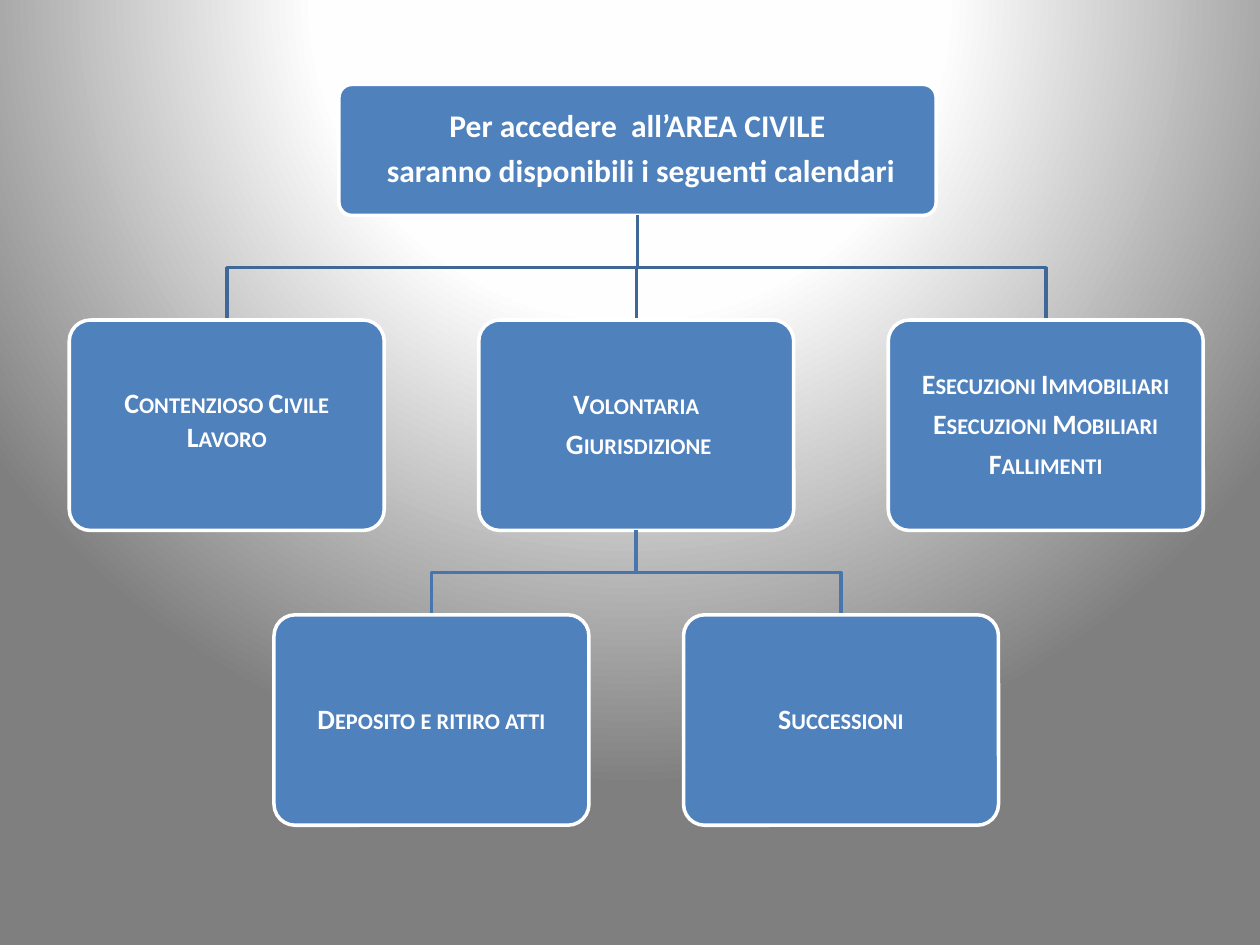
"""Build the organisation chart of the calendars available in the civil area."""
from dataclasses import dataclass

from pptx import Presentation
from pptx.dml.color import RGBColor
from pptx.enum.shapes import MSO_SHAPE
from pptx.enum.text import MSO_ANCHOR, PP_ALIGN
from pptx.oxml import parse_xml
from pptx.oxml.ns import nsdecls
from pptx.slide import Slide
from pptx.util import Inches, Pt

ROUNDED = MSO_SHAPE.ROUNDED_RECTANGLE
MIDDLE = MSO_ANCHOR.MIDDLE
CENTER = PP_ALIGN.CENTER

WHITE = RGBColor(0xFF, 0xFF, 0xFF)
NEAR_WHITE = RGBColor(0xFE, 0xFE, 0xFE)
GREY = RGBColor(0x7F, 0x7F, 0x7F)
BLUE = RGBColor(0x4F, 0x81, 0xBD)
DARK_LINK = RGBColor(0x3F, 0x67, 0x97)
LIGHT_LINK = RGBColor(0x48, 0x75, 0xAC)

BOX_W, BOX_H = 2.5, 1.67
MID_X, PITCH = 5.05, 3.25
ROW_2, ROW_3 = 2.54, 4.88
INSET = 0.07


@dataclass
class Node:
    lines: list[str]
    center: float
    top: float
    width: float = BOX_W
    height: float = BOX_H
    size: float = 16
    small_caps: bool = True
    line_spacing: float = 0.9
    space_after: float = 5.6

    @property
    def bottom(self) -> float:
        return self.top + self.height


def set_background(s: Slide) -> None:
    """Fill the background with a circular gradient centred above the slide."""
    stops = "".join(
        f'<a:gs pos="{pos * 1000}"><a:srgbClr val="{color}"/></a:gs>'
        for pos, color in ((0, WHITE), (40, NEAR_WHITE), (100, GREY))
    )
    bg = parse_xml(
        f'<p:bg {nsdecls("p", "a")}><p:bgPr><a:gradFill rotWithShape="1">'
        f'<a:gsLst>{stops}</a:gsLst><a:path path="circle">'
        '<a:fillToRect l="50000" t="-80000" r="50000" b="180000"/></a:path>'
        "</a:gradFill><a:effectLst/></p:bgPr></p:bg>"
    )
    s.element.cSld.insert(0, bg)


def draw_link(s: Slide, parent: Node, child: Node, color: RGBColor) -> None:
    """Draw the elbow line from a parent box down to a child box."""
    mid_y = (parent.bottom + child.top) / 2
    points = [
        (Inches(x), Inches(y))
        for x, y in (
            (parent.center, parent.bottom),
            (parent.center, mid_y),
            (child.center, mid_y),
            (child.center, child.top),
        )
    ]
    builder = s.shapes.build_freeform(*points[0])
    builder.add_line_segments(points[1:], close=False)
    sp = builder.convert_to_shape()
    sp.shadow.inherit = False
    sp.fill.background()
    sp.line.color.rgb = color
    sp.line.width = Pt(2)


def draw_node(s: Slide, node: Node) -> None:
    """Draw a rounded box with its centred lines of text."""
    sp = s.shapes.add_shape(
        ROUNDED, Inches(node.center - node.width / 2), Inches(node.top),
        Inches(node.width), Inches(node.height),
    )
    sp.adjustments[0] = 0.1
    sp.shadow.inherit = False
    sp.fill.solid()
    sp.fill.fore_color.rgb = BLUE
    sp.line.color.rgb = WHITE
    sp.line.width = Pt(2)
    tf = sp.text_frame
    tf.word_wrap = True
    tf.vertical_anchor = MIDDLE
    tf.margin_left = tf.margin_right = Inches(INSET)
    tf.margin_top = tf.margin_bottom = Inches(INSET)
    for i, line in enumerate(node.lines):
        p = tf.add_paragraph() if i else tf.paragraphs[0]
        p.alignment = CENTER
        p.line_spacing = node.line_spacing
        p.space_after = Pt(node.space_after)
        r = p.add_run()
        r.text = line
        r.font.name = "Calibri"
        r.font.size = Pt(node.size)
        r.font.bold = True
        r.font.color.rgb = WHITE
        if node.small_caps:
            r._r.get_or_add_rPr().set("cap", "small")


def main() -> None:
    prs = Presentation()
    prs.slide_width, prs.slide_height = Inches(10), Inches(7.5)
    s = prs.slides.add_slide(prs.slide_layouts[6])
    set_background(s)

    root = Node(
        ["Per accedere  all’AREA CIVILE", " saranno disponibili i seguenti calendari"],
        5.06, 0.67, 4.74, 1.04, size=18, small_caps=False, space_after=6.3,
    )
    disputes = Node(["Contenzioso Civile", "Lavoro"], MID_X - PITCH, ROW_2,
                    line_spacing=0.5, space_after=10)
    voluntary = Node(["Volontaria", " Giurisdizione"], MID_X, ROW_2)
    enforcement = Node(
        ["Esecuzioni Immobiliari", "Esecuzioni Mobiliari", "Fallimenti"],
        MID_X + PITCH, ROW_2,
    )
    deposits = Node(["Deposito e ritiro atti"], MID_X - PITCH / 2, ROW_3)
    successions = Node(["Successioni"], MID_X + PITCH / 2, ROW_3)

    draw_node(s, root)
    for parent, children, color in (
        (root, (disputes, voluntary, enforcement), DARK_LINK),
        (voluntary, (deposits, successions), LIGHT_LINK),
    ):
        for child in children:
            draw_link(s, parent, child, color)
            draw_node(s, child)

    prs.save("out.pptx")


if __name__ == "__main__":
    main()
